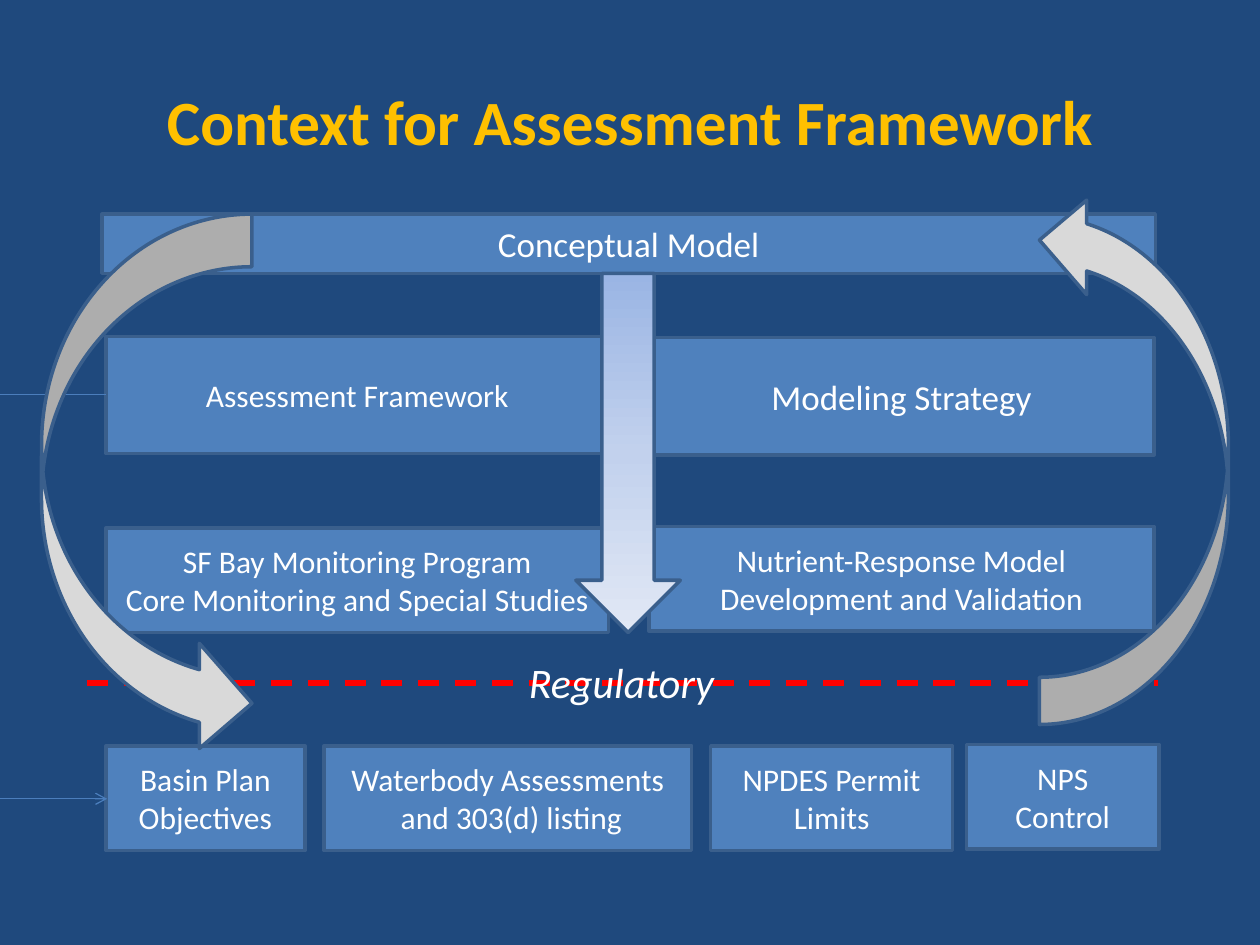
from copy import deepcopy
from lxml.etree import SubElement
from pptx import Presentation
from pptx.dml.color import RGBColor
from pptx.enum.dml import MSO_LINE
from pptx.enum.shapes import MSO_CONNECTOR, MSO_SHAPE
from pptx.enum.text import MSO_ANCHOR, PP_ALIGN
from pptx.oxml.ns import qn
from pptx.util import Inches, Pt

HUES = {
    "back": "1F497D", "title": "FFC000", "box": "4F81BD", "edge": "3A5F8C",
    "text": "FFFFFF", "curve": "D9D9D9", "link": "4B7EBC", "rule": "FF0000",
    "top": "9AB5E4", "mid": "C2D1ED", "base": "E1E8F5",
}
FONT = {"name": "Calibri", "size": Pt(18)}
TITLE = {"size": Pt(36), "bold": True}
LABEL = {"size": Pt(24), "italic": True}
LARGE = {"size": Pt(20)}

LEFT, RIGHT = 0.84, 5.15
WIDE_L, WIDE_R = 3.99, 4.01
TALL, LOW = 0.93, 0.83
BOXES = [
    (0.81, 1.7, 8.36, 0.47, "Conceptual Model", LARGE),
    (RIGHT, 2.68, WIDE_R, TALL, "Modeling Strategy", LARGE),
    (LEFT, 2.67, WIDE_L, TALL, "Assessment Framework", {}),
    (LEFT, 4.19, WIDE_L, LOW,
     "SF Bay Monitoring Program\nCore Monitoring and Special Studies", {}),
    (2.57, 5.92, 2.92, LOW, "Waterbody Assessments\n and 303(d) listing", {}),
    (RIGHT, 4.18, WIDE_R, LOW,
     "Nutrient-Response Model Development and Validation", {}),
    (5.64, 5.92, 1.92, LOW, "NPDES Permit Limits", {}),
    (LEFT, 5.92, 1.58, LOW, "Basin Plan Objectives", {}),
    (7.67, 5.91, 1.53, LOW, "NPS\nControl", {}),
]


def tint(name):
    return RGBColor.from_string(HUES[name])


def write(shape, text, style, align=PP_ALIGN.CENTER, anchor=MSO_ANCHOR.MIDDLE,
          wrap=True):
    frame = shape.text_frame
    frame.word_wrap = wrap
    frame.vertical_anchor = anchor
    frame.text = text
    for para in frame.paragraphs:
        para.alignment = align
        font = para.runs[0].font
        for key, value in {**FONT, **style}.items():
            setattr(font, key, value)
        font.color.rgb = tint("text")
    return frame


def add_form(slide, kind, place, fill):
    shape = slide.shapes.add_shape(kind, *map(Inches, place))
    shape.shadow.inherit = False
    shape.fill.solid()
    shape.fill.fore_color.rgb = tint(fill)
    shape.line.color.rgb = tint("edge")
    shape.line.width = Pt(2)
    return shape


def add_label(slide, place, text, style, **layout):
    label = slide.shapes.add_textbox(*map(Inches, place))
    return write(label, text, style, **layout)


def add_line(slide, kind, ends, hue, width):
    line = slide.shapes.add_connector(kind, *map(Inches, ends))
    line.line.color.rgb = tint(hue)
    line.line.width = Pt(width)
    SubElement(line._element.spPr, qn("a:effectLst"))
    return line


def add_loop(slide):
    loop = add_line(slide, MSO_CONNECTOR.ELBOW, (LEFT, 3.13, LEFT + 0.01, 6.34),
                    "link", 0.75)
    shape = loop._element.spPr.find(qn("a:prstGeom"))
    guide = SubElement(shape.find(qn("a:avLst")), qn("a:gd"))
    guide.set("name", "adj1")
    guide.set("fmla", "val -9400000")
    SubElement(loop.line._get_or_add_ln(), qn("a:tailEnd")).set("type", "arrow")


def add_fade(shape, hues):
    fill = shape.fill
    fill.gradient()
    fill.gradient_angle = 270
    stops = shape._element.spPr.find(".//" + qn("a:gsLst"))
    stops.insert(1, deepcopy(stops[0]))
    for step, (stop, hue) in enumerate(zip(fill.gradient_stops, hues)):
        stop.position = step / (len(hues) - 1)
        stop.color.rgb = tint(hue)


def main():
    deck = Presentation()
    deck.slide_width, deck.slide_height = Inches(10), Inches(7.5)
    slide = deck.slides.add_slide(deck.slide_layouts[6])
    slide.background.fill.solid()
    slide.background.fill.fore_color.rgb = tint("back")

    title = add_label(slide, (0.5, 0.33, 9, 1.25),
                      "Context for Assessment Framework", TITLE)
    title.paragraphs[0].runs[0].font.color.rgb = tint("title")
    for *place, text, style in BOXES:
        write(add_form(slide, MSO_SHAPE.RECTANGLE, place, "box"), text, style)

    add_loop(slide)
    rule = add_line(slide, MSO_CONNECTOR.STRAIGHT, (0.69, 5.42, 9.19, 5.42),
                    "rule", 3)
    rule.line.dash_style = MSO_LINE.DASH
    add_label(slide, (4.1, 5.16, 1.67, 0.5), "Regulatory", LABEL,
              align=PP_ALIGN.LEFT, anchor=MSO_ANCHOR.TOP, wrap=False)

    add_form(slide, MSO_SHAPE.CURVED_RIGHT_ARROW, (0.33, 1.7, 1.67, 4.3), "curve")
    back = add_form(slide, MSO_SHAPE.CURVED_LEFT_ARROW, (8.25, 1.53, 1.5, 4.22),
                    "curve")
    back.rotation = 180
    back._element.spPr.find(qn("a:xfrm")).set("flipH", "1")
    down = add_form(slide, MSO_SHAPE.DOWN_ARROW, (4.57, 2.17, 0.83, 2.85), "top")
    add_fade(down, ("top", "mid", "base"))

    deck.save("out.pptx")


if __name__ == "__main__":
    main()
